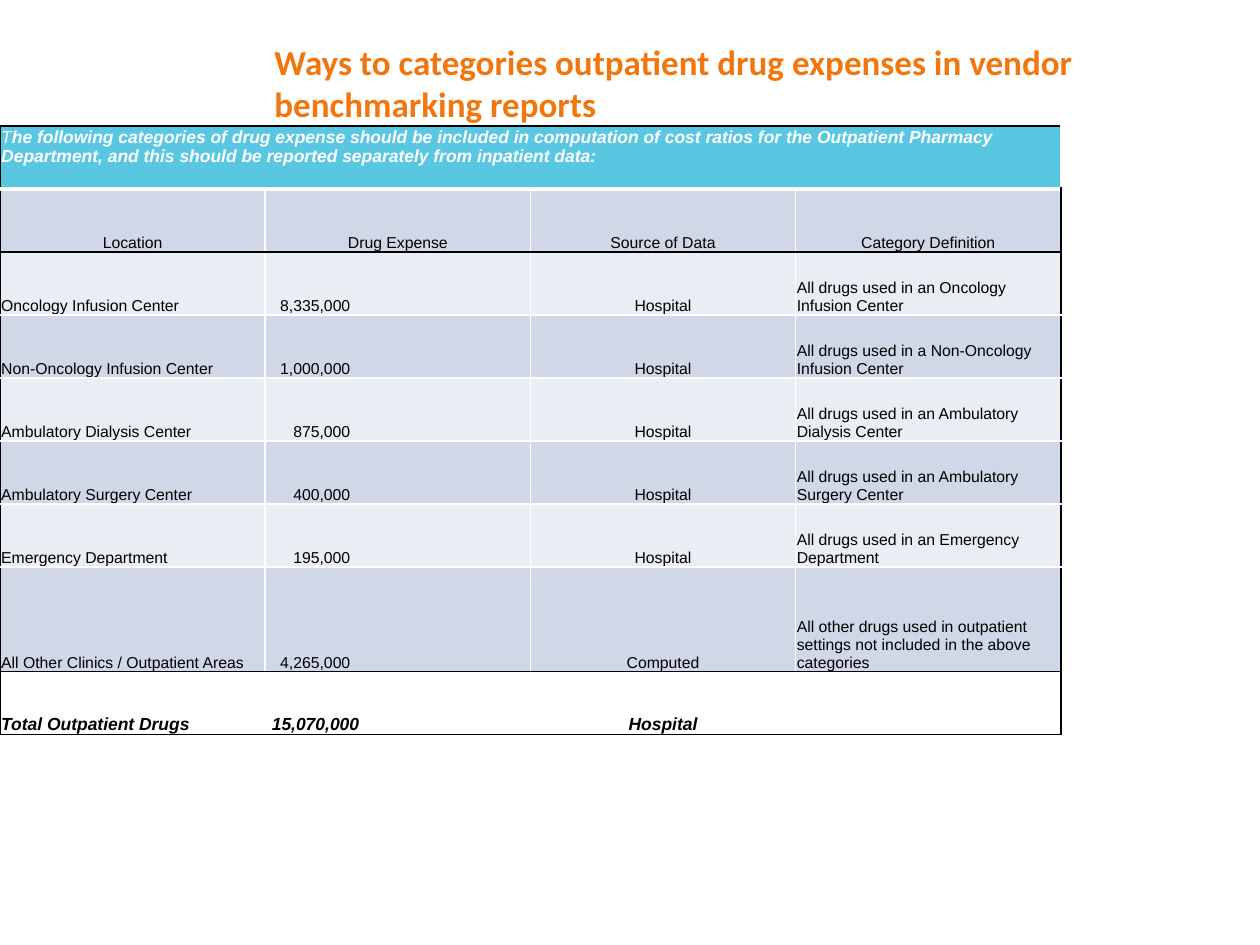
from pptx import Presentation
from pptx import util as u
from pptx.dml.color import RGBColor
from pptx.enum import text
from pptx.oxml.ns import qn
from lxml import etree

WHITE = RGBColor(0xFF, 0xFF, 0xFF)
BLACK = RGBColor(0, 0, 0)
ORANGE = RGBColor(0xF2, 0x76, 0x0E)
CYAN = RGBColor(0x59, 0xC7, 0xE2)
BLUE = RGBColor(0xD0, 0xD8, 0xE8)
PALE = RGBColor(0xE9, 0xED, 0xF4)

LEFT, CENTER, RIGHT = text.PP_ALIGN.LEFT, text.PP_ALIGN.CENTER, text.PP_ALIGN.RIGHT
TOP, MIDDLE, BOTTOM = (text.MSO_ANCHOR.TOP, text.MSO_ANCHOR.MIDDLE,
                       text.MSO_ANCHOR.BOTTOM)

TITLE = "Ways to categories outpatient drug expenses in vendor benchmarking reports"
BANNER = ("T", "he following categories of drug expense should be included in "
          "computation of cost ratios for the Outpatient Pharmacy Department, and "
          "this should be reported separately from inpatient data:")
HEADERS = ("Location", "Drug Expense", "Source of Data", "Category Definition")
EXPENSES = [
    ("Oncology Infusion Center", "8,335,000", "Hospital",
     "All drugs used in an Oncology Infusion Center"),
    ("Non-Oncology Infusion Center", "1,000,000", "Hospital",
     "All drugs used in a Non-Oncology Infusion Center"),
    ("Ambulatory Dialysis Center", "875,000", "Hospital",
     "All drugs used in an Ambulatory Dialysis Center"),
    ("Ambulatory Surgery Center", "400,000", "Hospital",
     "All drugs used in an Ambulatory Surgery Center"),
    ("Emergency Department", "195,000", "Hospital",
     "All drugs used in an Emergency Department"),
    ("All Other Clinics / Outpatient Areas", "4,265,000", "Computed",
     "All other drugs used in outpatient settings not included in the above categories"),
]
TOTAL = ("Total Outpatient Drugs", "15,070,000", "Hospital", "")
ROW_HEIGHTS = [0.5] * 7 + [0.83, 0.5]
COLUMNS = len(HEADERS)
ALIGNS = (LEFT, RIGHT, CENTER, LEFT)


class Deck:
    title_font = "Calibri"
    body_font = "Arial"

    def __init__(self, prs):
        self.s = prs.slides.add_slide(prs.slide_layouts[6])

    def style(self, r, size, color, font, bold=False, italic=False):
        r.font.size, r.font.name = u.Pt(size), font
        r.font.bold, r.font.italic = bold, italic
        r.font.color.rgb = color

    def title(self, words, left, top, width, height):
        sp = self.s.shapes.add_textbox(*map(u.Inches, (left, top, width, height)))
        tf = sp.text_frame
        tf.word_wrap = True
        tf.vertical_anchor = MIDDLE
        tf.text = words
        self.style(tf.paragraphs[0].runs[0], 20, ORANGE, self.title_font, bold=True)

    def table(self, left, top, width, heights):
        frame = self.s.shapes.add_table(
            len(heights), COLUMNS,
            *map(u.Inches, (left, top, width, sum(heights))))
        tbl = frame.table
        tbl.first_row = tbl.horz_banding = False
        for column in tbl.columns:
            column.width = u.Inches(width / COLUMNS)
        for row, height in zip(tbl.rows, heights):
            row.height = u.Inches(height)
        return tbl

    def border(self, cell, side, color, width):
        ln = etree.SubElement(cell._tc.get_or_add_tcPr(), qn("a:ln" + side),
                              w=str(u.Pt(width)))
        fill = etree.SubElement(ln, qn("a:solidFill"))
        etree.SubElement(fill, qn("a:srgbClr"), val=str(color))

    def cell(self, tbl, row, col, fill):
        """Set margins, borders and fill of one cell."""
        cell = tbl.cell(row, col)
        cell.margin_left = cell.margin_right = cell.margin_top = u.Inches(0.01)
        cell.margin_bottom = 0
        last = len(tbl.rows)
        black_rules = (0, 2, last - 1, last)
        for side, edge in (("L", col == 0), ("R", col == COLUMNS - 1)):
            self.border(cell, side, BLACK if edge else WHITE, 1)
        for side, rule in (("T", row), ("B", row + 1)):
            self.border(cell, side, BLACK if rule in black_rules else WHITE,
                        3 if rule == 1 else 1)
        if fill is None:
            cell.fill.background()
        else:
            cell.fill.solid()
            cell.fill.fore_color.rgb = fill
        return cell

    def row(self, tbl, row, values, fill, aligns, size=9, strong=False, indent=1.43):
        for col, (value, align) in enumerate(zip(values, aligns)):
            cell = self.cell(tbl, row, col, fill)
            cell.vertical_anchor = BOTTOM
            if align == RIGHT:
                cell.margin_right = u.Inches(indent)
            cell.text_frame.text = value
            p = cell.text_frame.paragraphs[0]
            p.alignment = align
            for r in p.runs:
                self.style(r, size, BLACK, self.body_font, strong, strong)

    def banner(self, tbl, parts):
        for col in range(COLUMNS):
            self.cell(tbl, 0, col, CYAN)
        cell = tbl.cell(0, 0)
        cell.merge(tbl.cell(0, COLUMNS - 1))
        cell.vertical_anchor = TOP
        p = cell.text_frame.paragraphs[0]
        for part, bold in zip(parts, (False, True)):
            r = p.add_run()
            r.text = part
            self.style(r, 10, WHITE, self.body_font, bold, italic=True)


def main():
    prs = Presentation()
    prs.slide_width, prs.slide_height = u.Inches(10), u.Inches(7.5)
    deck = Deck(prs)

    # Expense table
    tbl = deck.table(0, 1, 8.42, ROW_HEIGHTS)
    deck.banner(tbl, BANNER)
    deck.row(tbl, 1, HEADERS, BLUE, [CENTER] * COLUMNS)
    for i, expense in enumerate(EXPENSES, start=2):
        deck.row(tbl, i, expense, BLUE if i % 2 else PALE, ALIGNS)
    deck.row(tbl, len(ROW_HEIGHTS) - 1, TOTAL, None, ALIGNS,
             size=10, strong=True, indent=1.36)

    # Title
    deck.title(TITLE, 2.08, 0.03, 7.92, 1.25)

    prs.save("out.pptx")


if __name__ == "__main__":
    main()
